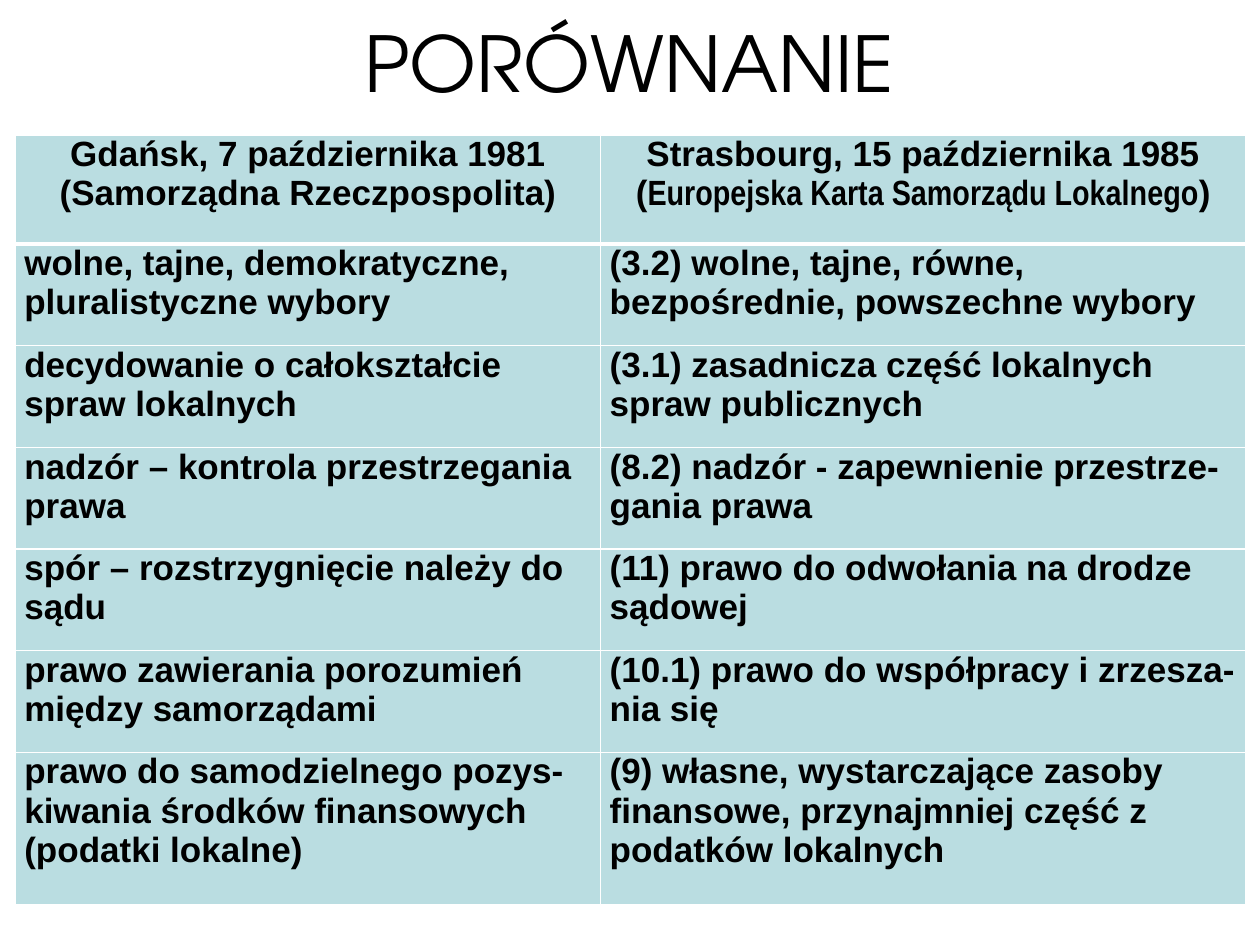
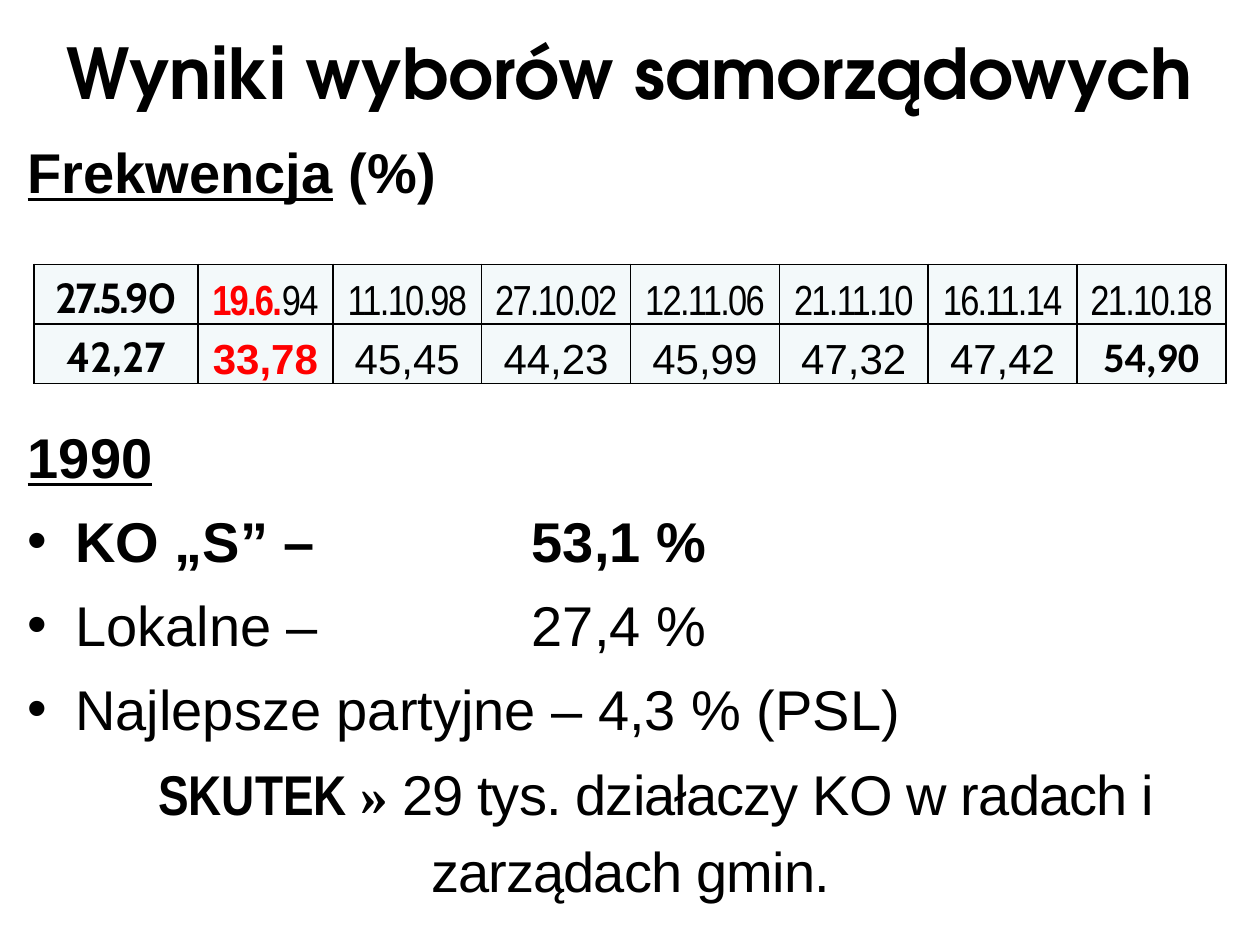
from lxml.etree import SubElement
from pptx import Presentation
from pptx.dml.color import RGBColor
from pptx.enum.text import MSO_ANCHOR, PP_ALIGN
from pptx.oxml import parse_xml
from pptx.oxml.ns import nsdecls, qn
from pptx.util import Cm, Pt

COLOURS = {
    "text": "000000",
    "accent": "FF0000",
    "background": "FFFFFF",
    "comparison": "BADDE1",
    "turnout": "F3F9FA",
}
TITLE_FONT = "TeX Gyre Adventor"
BODY_FONT = "Arial"
NARROW_FONT = "Arial Narrow"

COMPARISON_HEADER = [
    [["Gdańsk, 7 października 1981"], ["(Samorządna Rzeczpospolita)"]],
    [
        ["Strasbourg, 15 października 1985"],
        ["(", ("Europejska Karta Samorządu Lokalnego", {"font": NARROW_FONT}), ")"],
    ],
]
COMPARISON_ROWS = [
    ("wolne, tajne, demokratyczne, pluralistyczne wybory",
     "(3.2) wolne, tajne, równe, bezpośrednie, powszechne wybory"),
    ("decydowanie o całokształcie spraw lokalnych",
     "(3.1) zasadnicza część lokalnych spraw publicznych"),
    ("nadzór – kontrola przestrzegania prawa",
     "(8.2) nadzór - zapewnienie przestrze-gania prawa"),
    ("spór – rozstrzygnięcie należy do sądu",
     "(11) prawo do odwołania na drodze sądowej"),
    ("prawo zawierania porozumień między samorządami",
     "(10.1) prawo do współpracy i zrzesza-nia się"),
    ("prawo do samodzielnego pozys-kiwania środków finansowych (podatki lokalne)",
     "(9) własne, wystarczające zasoby finansowe, przynajmniej część z podatków lokalnych"),
]
TURNOUT = [
    ("27.5.90", "42,27"),
    ("19.6.94", "33,78"),
    ("11.10.98", "45,45"),
    ("27.10.02", "44,23"),
    ("12.11.06", "45,99"),
    ("21.11.10", "47,32"),
    ("16.11.14", "47,42"),
    ("21.10.18", "54,90"),
]


def colour(name):
    return RGBColor.from_string(COLOURS[name])


def add_span(para, text, font=BODY_FONT, size=32, tone="text", bold=False,
             underline=False, tracking=0):
    span = para.add_run()
    span.text = text
    span.font.name = font
    span.font.size = Pt(size)
    span.font.bold = bold
    span.font.underline = underline
    span.font.color.rgb = colour(tone)
    if tracking:
        span.font._element.set("spc", str(int(tracking * 100)))


def write_para(frame, spans, first=False, align=PP_ALIGN.LEFT, after=0, line=None,
               bullet=False, indent=0, tab=None, **style):
    para = frame.paragraphs[0] if first else frame.add_paragraph()
    para.alignment = align
    para.space_after = Pt(after)
    if line:
        para.line_spacing = line
    properties = para._p.get_or_add_pPr()
    if bullet:
        properties.set("marL", str(Cm(0.96)))
        properties.set("indent", str(-Cm(0.96)))
        SubElement(properties, qn("a:buFont"), typeface=BODY_FONT)
        SubElement(properties, qn("a:buChar"), char="•")
    elif indent:
        properties.set("indent", str(Cm(indent)))
    if tab:
        stops = SubElement(properties, qn("a:tabLst"))
        SubElement(stops, qn("a:tab"), pos=str(Cm(tab)), algn="l")
    for span in spans:
        text, changes = (span, {}) if isinstance(span, str) else span
        add_span(para, text, **{**style, **changes})


def add_box(page, left, top, width, height, anchor=MSO_ANCHOR.TOP):
    box = page.shapes.add_textbox(Cm(left), Cm(top), Cm(width), Cm(height))
    frame = box.text_frame
    frame.word_wrap = True
    frame.vertical_anchor = anchor
    return frame


def add_title(page, text, top, **style):
    frame = add_box(page, 0.69, top, 24, 2.21, MSO_ANCHOR.MIDDLE)
    write_para(frame, [text], first=True, align=PP_ALIGN.CENTER, font=TITLE_FONT, **style)


def add_grid(page, left, top, widths, heights):
    shape = page.shapes.add_table(len(heights), len(widths), Cm(left), Cm(top),
                                  Cm(sum(widths)), Cm(sum(heights)))
    grid = shape.table
    grid.first_row = grid.horz_banding = False
    for column, width in zip(grid.columns, widths):
        column.width = Cm(width)
    for row, height in zip(grid.rows, heights):
        row.height = Cm(height)
    return grid


def format_cell(cell, fill, border, side, edge, anchor=MSO_ANCHOR.TOP, top=1, bottom=1):
    cell.margin_left = cell.margin_right = Cm(side)
    cell.margin_top, cell.margin_bottom = Cm(edge), Cm(0)
    cell.vertical_anchor = anchor
    cell.fill.solid()
    cell.fill.fore_color.rgb = colour(fill)
    properties = cell._tc.get_or_add_tcPr()
    for place, (name, points) in enumerate({"L": 1, "R": 1, "T": top, "B": bottom}.items()):
        properties.insert(place, parse_xml(
            f'<a:ln{name} {nsdecls("a")} w="{Pt(points)}"><a:solidFill>'
            f'<a:srgbClr val="{COLOURS[border]}"/></a:solidFill></a:ln{name}>'))


def add_comparison(page):
    rows = [COMPARISON_HEADER]
    rows += [[[[text]] for text in pair] for pair in COMPARISON_ROWS]
    grid = add_grid(page, 0.31, 2.72, [11.8, 13], [2.2] + [2.05] * 5 + [3.07])
    for number, row in enumerate(rows):
        header = number == 0
        for cell, paras in zip(grid.rows[number].cells, row):
            format_cell(cell, "comparison", "background", 0.18, 0,
                        top=3 if number == 1 else 1, bottom=3 if header else 1)
            for place, spans in enumerate(paras):
                write_para(cell.text_frame, spans, first=place == 0, size=20, bold=True,
                           align=PP_ALIGN.CENTER if header else PP_ALIGN.LEFT)


def turnout_spans(date, value):
    date_style = {"font": NARROW_FONT, "tracking": -1}
    marked = {"tone": "accent", "bold": True}
    if date == "27.5.90":
        strong = {"font": "Cabin", "bold": True}
        return [(date, {**strong, "tracking": -1.5})], [(value, strong)]
    if date == "19.6.94":
        return [("19.6.", {**date_style, **marked}), ("94", date_style)], [(value, marked)]
    if date == "21.10.18":
        return [(date, date_style)], [(value, {"font": "Calibri", "bold": True})]
    return [(date, date_style)], [value]


def add_turnout(page):
    grid = add_grid(page, 0.69, 5.33, [3.3, 2.72] + [3] * 6, [1.2, 1.2])
    for column, (date, value) in enumerate(TURNOUT):
        for row, spans in enumerate(turnout_spans(date, value)):
            cell = grid.cell(row, column)
            format_cell(cell, "turnout", "text", 0.03, 0.03, MSO_ANCHOR.BOTTOM)
            write_para(cell.text_frame, spans, first=True, align=PP_ALIGN.CENTER, size=24)


def add_results(page):
    heading = add_box(page, 0.31, 2.64, 24.8, 1.6)
    write_para(heading, [("Frekwencja", {"underline": True}), " (%)"], first=True, bold=True)

    results = add_box(page, 0.31, 8.18, 24.8, 10.7)
    spacing = {"line": 1.15, "after": 4}
    write_para(results, ["1990"], first=True, bold=True, underline=True, **spacing)
    write_para(results, ["KO „S” –\t53,1 %"], bullet=True, tab=10.16, bold=True, **spacing)
    write_para(results, ["Lokalne –\t27,4 %"], bullet=True, tab=10.16, **spacing)
    write_para(results, ["Najlepsze partyjne – 4,3 % (PSL)"], bullet=True, **spacing)
    write_para(results, [
        ("SKUTEK ", {"font": NARROW_FONT, "bold": True}),
        ("» ", {"font": "Times New Roman", "bold": True}),
        ("29 tys. działaczy KO w radach i zarządach gmin.", {"tracking": -0.5}),
    ], align=PP_ALIGN.CENTER, indent=1.02, line=1.15)


def add_page(deck):
    page = deck.slides.add_slide(deck.slide_layouts[6])
    page.background.fill.solid()
    page.background.fill.fore_color.rgb = colour("background")
    return page


def main():
    deck = Presentation()
    deck.slide_width, deck.slide_height = Cm(25.4), Cm(19.05)

    comparison = add_page(deck)
    add_title(comparison, "PORÓWNANIE", 0.13, size=44)
    add_comparison(comparison)

    elections = add_page(deck)
    add_title(elections, "Wyniki wyborów samorządowych", 0.33, size=40, bold=True)
    add_results(elections)
    add_turnout(elections)

    deck.save("out.pptx")


if __name__ == "__main__":
    main()
